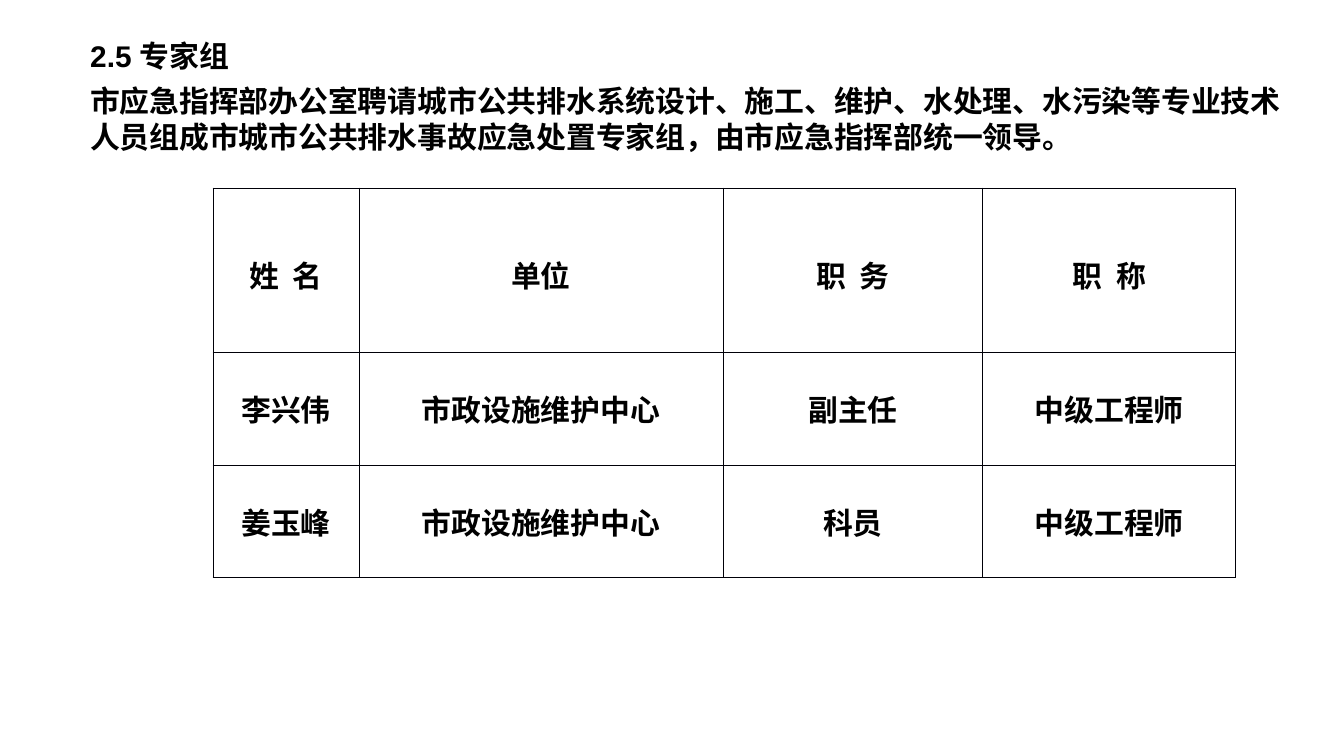
from lxml import etree
from pptx import Presentation
from pptx.dml.color import RGBColor
from pptx.enum.text import MSO_ANCHOR, PP_ALIGN
from pptx.oxml.ns import qn
from pptx.util import Emu, Pt

CENTER = PP_ALIGN.CENTER
MIDDLE = MSO_ANCHOR.MIDDLE
EMU_PER_PX = 914400 / 134.4
CJK_FONT = "Noto Sans CJK SC"
BLACK = "000000"
BORDER = "000008"

INTRO = [
    "2.5 专家组",
    "市应急指挥部办公室聘请城市公共排水系统设计、施工、维护、水处理、水污染等专业技术"
    "人员组成市城市公共排水事故应急处置专家组，由市应急指挥部统一领导。",
]
EXPERTS = [
    ["姓  名", "单位", "职  务", "职  称"],
    ["李兴伟", "市政设施维护中心", "副主任", "中级工程师"],
    ["姜玉峰", "市政设施维护中心", "科员", "中级工程师"],
]
COLUMN_WIDTHS = [146, 364, 260, 253]
ROW_HEIGHTS = [164, 113, 113]


def px(length):
    return Emu(round(length * EMU_PER_PX))


def color(hex_string):
    return RGBColor.from_string(hex_string)


def style(paragraph, latin_font):
    font = paragraph.font
    font.name = latin_font
    font.size = Pt(16)
    font.bold = True
    font.color.rgb = color(BLACK)
    defaults = paragraph._p.pPr.find(qn("a:defRPr"))
    etree.SubElement(defaults, qn("a:ea"), typeface=CJK_FONT)


def add_borders(cell):
    properties = cell._tc.get_or_add_tcPr()
    for position, side in enumerate(("lnL", "lnR", "lnT", "lnB")):
        line = etree.Element(qn(f"a:{side}"), w=str(Pt(0.5)))
        fill = etree.SubElement(line, qn("a:solidFill"))
        etree.SubElement(fill, qn("a:srgbClr"), val=BORDER)
        properties.insert(position, line)


# Heading and introduction
def add_intro(slide, left, top, width, height):
    frame = slide.shapes.add_textbox(px(left), px(top), px(width), px(height)).text_frame
    frame.word_wrap = True
    for index, text in enumerate(INTRO):
        paragraph = frame.add_paragraph() if index else frame.paragraphs[0]
        paragraph.text = text
        paragraph.space_after = Pt(5)
        style(paragraph, "Arial")


# Table of experts
def add_experts(slide, left, top):
    table = slide.shapes.add_table(
        len(EXPERTS), len(COLUMN_WIDTHS), px(left), px(top),
        px(sum(COLUMN_WIDTHS)), px(sum(ROW_HEIGHTS))).table
    table.first_row = table.horz_banding = False
    for column, width in zip(table.columns, COLUMN_WIDTHS):
        column.width = px(width)
    for row, height, texts in zip(table.rows, ROW_HEIGHTS, EXPERTS):
        row.height = px(height)
        for cell, text in zip(row.cells, texts):
            cell.fill.background()
            cell.vertical_anchor = MIDDLE
            cell.margin_left = cell.margin_right = px(10)
            cell.margin_top = cell.margin_bottom = 0
            add_borders(cell)
            paragraph = cell.text_frame.paragraphs[0]
            paragraph.text = text
            paragraph.alignment = CENTER
            if texts is EXPERTS[0]:
                paragraph.line_spacing = Pt(28)
            style(paragraph, CJK_FONT)


def main():
    deck = Presentation()
    deck.slide_width, deck.slide_height = px(1344), px(756)
    slide = deck.slides.add_slide(deck.slide_layouts[6])
    add_intro(slide, 77, 31, 1223, 668)
    add_experts(slide, 213, 188)
    deck.save("out.pptx")


if __name__ == "__main__":
    main()
